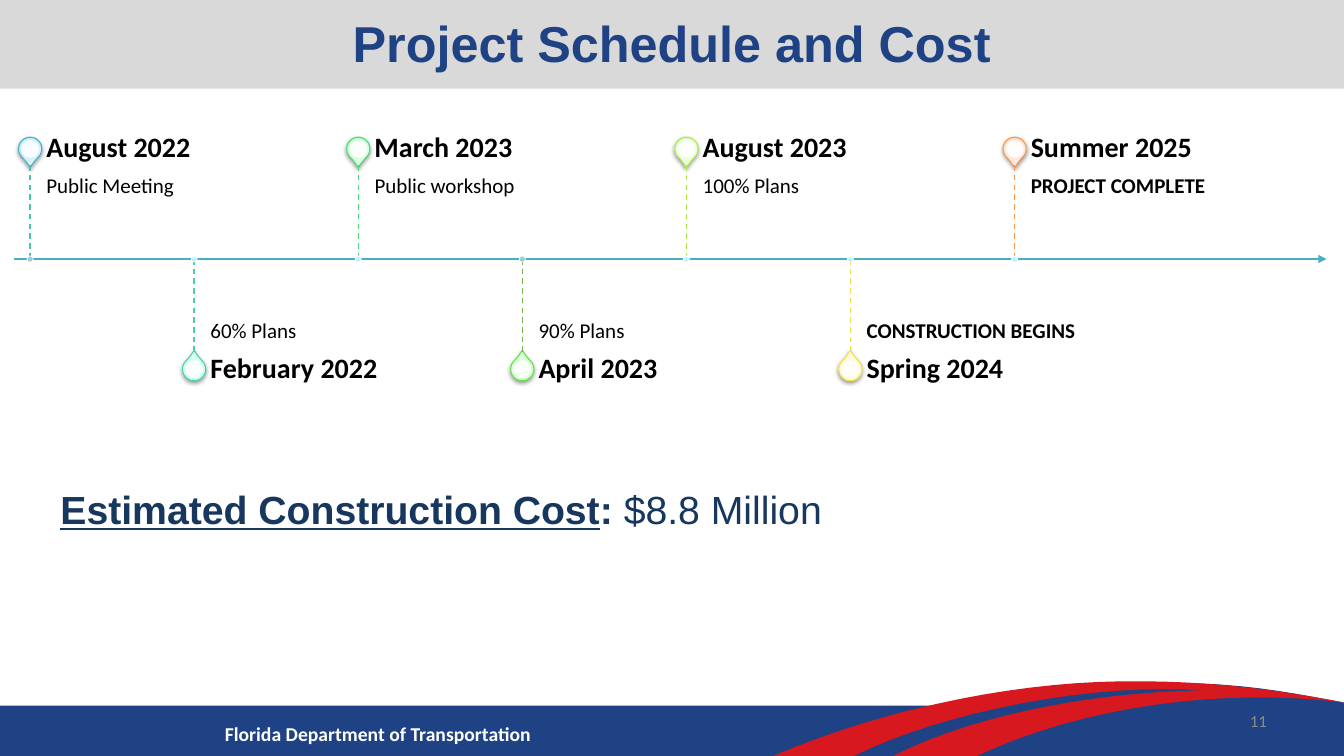
"""Builds the project schedule and cost slide."""
from dataclasses import dataclass
from typing import NamedTuple

from lxml.etree import SubElement
from pptx import Presentation
from pptx.dml.color import RGBColor
from pptx.enum.dml import MSO_LINE
from pptx.enum.shapes import MSO_CONNECTOR, MSO_SHAPE
from pptx.enum.text import MSO_ANCHOR, PP_ALIGN
from pptx.oxml.ns import qn
from pptx.shapes.autoshape import Shape
from pptx.shapes.connector import Connector
from pptx.shapes.shapetree import SlideShapes
from pptx.text.text import Font
from pptx.util import Pt

Stops = tuple[tuple[int, str], ...]


@dataclass(frozen=True)
class Theme:
    head: str = "Arial"
    body: str = "Calibri"
    navy: str = "1F4284"
    ink: str = "17375E"
    red: str = "D7181F"
    band: str = "D9D9D9"
    grey: str = "8C8C8C"
    black: str = "000000"
    white: str = "FFFFFF"
    axis: str = "4BACC6"
    pale: Stops = ((0, "A7E6FF"), (35, "C1EDFF"), (100, "E7F8FF"))
    deep: Stops = ((0, "AAD2E1"), (50, "9DCADB"), (100, "8BC5D9"))
    title: int = 36
    cost: int = 28
    date: int = 20
    label: int = 15
    foot: int = 14
    page: int = 12


class Box(NamedTuple):
    x: float
    y: float
    w: float
    h: float


class Style(NamedTuple):
    size: int
    color: str
    bold: bool = False
    font: str = "Calibri"


class Arc(NamedTuple):
    start: tuple[float, float]
    pull: tuple[float, float]
    push: tuple[float, float]
    end: tuple[float, float]


@dataclass(frozen=True)
class Event:
    date: str
    label: str
    color: str
    glow: tuple[str, str, str]
    stem: str = ""
    bold: bool = False


T = Theme()
WIDE, HIGH = 960, 540
AXIS, FIRST, STEP = 185, 21.5, 117.2
EVENTS = [
    Event("August 2022", "Public Meeting", "4BACC6",
          ("A7E6FF", "C1EDFF", "E7F8FF"), stem="4AC3AB"),
    Event("February 2022", "60% Plans", "49CFAE", ("ABFFE3", "C3FFEA", "E8FFF7")),
    Event("March 2023", "Public workshop", "47D872", ("AFFFBD", "C6FFD0", "E9FFED")),
    Event("April 2023", "90% Plans", "60E146",
          ("B9FFB2", "CDFFC9", "ECFFEA"), stem="78B849"),
    Event("August 2023", "100% Plans", "ACE946", ("DBFFB6", "E5FFCB", "F5FFEB")),
    Event("Spring 2024", "CONSTRUCTION BEGINS", "F0E146",
          ("FFF6B9", "FFF8CE", "FFFCEC"), bold=True),
    Event("Summer 2025", "PROJECT COMPLETE", "F79646",
          ("FFD2BD", "FFDED0", "FFF2ED"), bold=True),
]
HILL = [
    Arc((658, 510.5), (833, 472.3), (902.9, 491.8), (960, 501.8)),
    Arc((960, 540), (842, 540), (725, 540), (607.7, 540)),
]
SWOOSH = [
    Arc((815.8, 486.7), (864, 486.7), (913, 492.5), (960, 501.8)),
    Arc((960, 501.8), (874.8, 491), (774, 504), (697.7, 540)),
    Arc((637.9, 540), (702, 507.6), (792, 493.9), (859, 493.2)),
    Arc((859, 493.2), (784.8, 487.4), (676.8, 506.9), (609.8, 540)),
    Arc((552.2, 540), (637.2, 504), (734.4, 485.3), (815.8, 486.7)),
]


def paint(shape: Shape, color: str) -> None:
    shape.shadow.inherit = False
    shape.fill.solid()
    shape.fill.fore_color.rgb = RGBColor.from_string(color)
    shape.line.fill.background()


def draw(shapes: SlideShapes, kind: MSO_SHAPE, box: Box, color: str) -> Shape:
    shape = shapes.add_shape(kind, *map(Pt, box))
    paint(shape, color)
    return shape


def edge(shape: Shape | Connector, color: str, width: float) -> None:
    shape.line.color.rgb = RGBColor.from_string(color)
    shape.line.width = Pt(width)


def blend(shape: Shape, stops: Stops, angle: int) -> None:
    shape.fill.gradient()
    shape.fill.gradient_angle = angle
    chain = shape.element.spPr.find(qn("a:gradFill")).find(qn("a:gsLst"))
    chain.clear()
    for place, color in stops:
        stop = SubElement(chain, qn("a:gs"), pos=str(place * 1000))
        SubElement(stop, qn("a:srgbClr"), val=color)


def shade(shape: Shape) -> None:
    glow = SubElement(shape.element.spPr.find(qn("a:effectLst")), qn("a:outerShdw"),
                      blurRad=str(Pt(3.1)), dist=str(Pt(1.6)), dir="5400000",
                      rotWithShape="0")
    tint = SubElement(glow, qn("a:srgbClr"), val=T.black)
    SubElement(tint, qn("a:alpha"), val="38000")


def curve(shapes: SlideShapes, arcs: list[Arc], color: str) -> None:
    spots = []
    for arc in arcs:
        for t in (n / 16 for n in range(17)):
            parts = ((1 - t) ** 3, 3 * t * (1 - t) ** 2, 3 * t * t * (1 - t), t ** 3)
            spots.append(tuple(Pt(sum(k * p[i] for k, p in zip(parts, arc)))
                               for i in (0, 1)))
    pen = shapes.build_freeform(*spots[0])
    pen.add_line_segments(spots[1:], close=True)
    paint(pen.convert_to_shape(), color)


def dress(font: Font, style: Style) -> None:
    font.name, font.size, font.bold = style.font, Pt(style.size), style.bold
    font.color.rgb = RGBColor.from_string(style.color)


def write(shapes: SlideShapes, box: Box, text: str, style: Style,
          anchor: MSO_ANCHOR = MSO_ANCHOR.TOP, align: PP_ALIGN = PP_ALIGN.LEFT,
          space: float = 1.0) -> Shape:
    shape = shapes.add_textbox(*map(Pt, box))
    frame = shape.text_frame
    frame.margin_left = frame.margin_right = frame.margin_top = frame.margin_bottom = 0
    frame.word_wrap, frame.vertical_anchor = True, anchor
    frame.text = text
    line = frame.paragraphs[0]
    line.alignment, line.line_spacing = align, space
    dress(line.runs[0].font, style)
    return shape


def link(shapes: SlideShapes, x: float, y: float, right: float, low: float,
         color: str, width: float) -> Connector:
    line = shapes.add_connector(MSO_CONNECTOR.STRAIGHT, *map(Pt, (x, y, right, low)))
    edge(line, color, width)
    SubElement(line.element.spPr, qn("a:effectLst"))
    return line


def disc(x: float, y: float, size: float) -> Box:
    return Box(x - size / 2, y - size / 2, size, size)


def mark(shapes: SlideShapes, index: int, event: Event) -> None:
    above = index % 2 == 0
    side = -1 if above else 1
    x, y = FIRST + STEP * index, AXIS + side * 78.7
    pin = draw(shapes, MSO_SHAPE.TEAR, disc(x, y, 16.6), T.white)
    pin.adjustments[0] = 1.15
    pin.rotation = 135 if above else 315
    blend(pin, tuple(zip((0, 35, 100), event.glow)), 90)
    edge(pin, event.color, 0.75)
    shade(pin)
    core = draw(shapes, MSO_SHAPE.OVAL, disc(x, y, 13), T.white)
    tint = core.element.spPr.find(qn("a:solidFill"))[0]
    SubElement(tint, qn("a:alpha"), val="90000")
    left = x + 11.6
    write(shapes, Box(left, AXIS + side * 35.8 - 24, 195, 48), event.label,
          Style(T.label, T.black, event.bold),
          MSO_ANCHOR.TOP if above else MSO_ANCHOR.BOTTOM, space=0.9)
    write(shapes, Box(left, y - 11.9, 185, 23.8), event.date,
          Style(T.date, T.black, True), MSO_ANCHOR.MIDDLE, space=0.9)
    top, low = sorted((AXIS, AXIS + side * 67))
    stem = link(shapes, x, top, x, low, event.stem or event.color, 1)
    stem.line.dash_style = MSO_LINE.DASH
    dot = draw(shapes, MSO_SHAPE.OVAL, disc(x, AXIS, 4.3), T.white)
    blend(dot, *((T.deep, 270) if event.stem else (T.pale, 90)))
    edge(dot, T.white, 0.5)


def main() -> None:
    deck = Presentation()
    deck.slide_width, deck.slide_height = Pt(WIDE), Pt(HIGH)
    shapes = deck.slides.add_slide(deck.slide_layouts[6]).shapes
    draw(shapes, MSO_SHAPE.RECTANGLE, Box(0, 0, WIDE, 63.4), T.band)
    draw(shapes, MSO_SHAPE.RECTANGLE, Box(0, 504, WIDE, 36), T.navy)
    write(shapes, Box(160.6, 515.5, 380, 18), "Florida Department of Transportation",
          Style(T.foot, T.white, True))
    curve(shapes, HILL, T.navy)
    curve(shapes, SWOOSH, T.red)
    write(shapes, Box(48, 0, 864, 60), "Project Schedule and Cost",
          Style(T.title, T.navy, True, T.head), MSO_ANCHOR.MIDDLE, PP_ALIGN.CENTER)
    cost = write(shapes, Box(43.2, 347, 605, 40), "Estimated Construction Cost",
                 Style(T.cost, T.ink, True, T.head))
    line = cost.text_frame.paragraphs[0]
    line.runs[0].font.underline = True
    for text, bold in ((": ", True), ("$8.8 Million", False)):
        run = line.add_run()
        run.text = text
        dress(run.font, Style(T.cost, T.ink, bold, T.head))
    write(shapes, Box(688, 500.4, 217, 28.8), "11", Style(T.page, T.grey),
          MSO_ANCHOR.MIDDLE, PP_ALIGN.RIGHT)
    axis = link(shapes, 10, AXIS, 947.6, AXIS, T.axis, 1.5)
    SubElement(axis.line._get_or_add_ln(), qn("a:tailEnd"), type="triangle")
    for index, event in enumerate(EVENTS):
        mark(shapes, index, event)
    deck.save("out.pptx")


if __name__ == "__main__":
    main()
